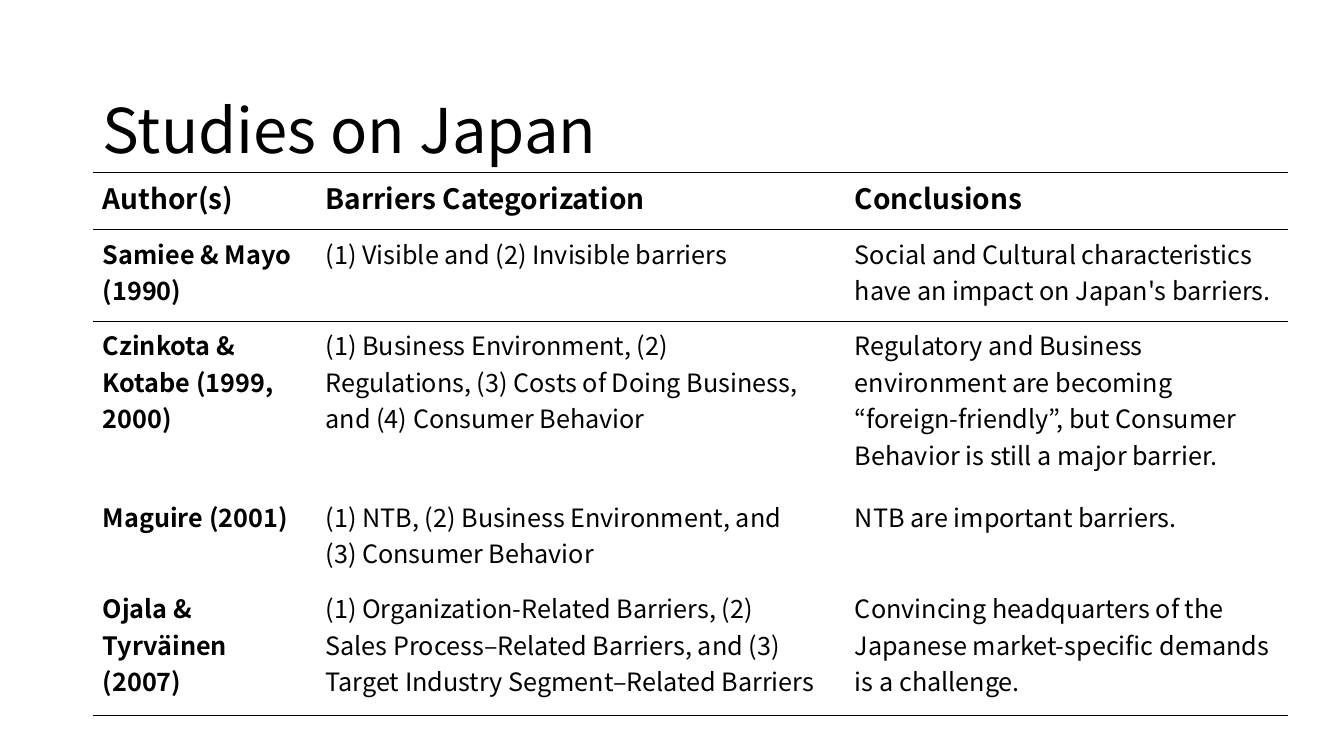
"""Build a slide with a ruled table of studies on trade barriers in Japan."""
from lxml import etree
from pptx import Presentation
from pptx import util as u
from pptx.dml.color import RGBColor
from pptx.enum import text
from pptx.oxml.ns import qn

TITLE = "Studies on Japan"
STUDIES = [
    ("Author(s)", "Barriers Categorization", "Conclusions"),
    ("Samiee & Mayo (1990)",
     "(1) Visible and (2) Invisible barriers",
     "Social and Cultural characteristics\nhave an impact on Japan's barriers."),
    ("Czinkota & Kotabe (1999, 2000)",
     "(1) Business Environment, (2)\nRegulations, (3) Costs of Doing Business,\n"
     "and (4) Consumer Behavior",
     "Regulatory and Business\nenvironment are becoming\n"
     "“foreign-friendly”, but Consumer\nBehavior is still a major barrier."),
    ("Maguire (2001)",
     "(1) NTB, (2) Business Environment, and\n(3) Consumer Behavior",
     "NTB are important barriers."),
    ("Ojala & Tyrväinen (2007)",
     "(1) Organization-Related Barriers, (2)\nSales Process–Related Barriers, and (3)\n"
     "Target Industry Segment–Related Barriers",
     "Convincing headquarters of the\nJapanese market-specific demands\nis a challenge."),
]
COLUMN_WIDTHS = (2.21, 5.25, 4.39)
ROW_HEIGHTS = (0.57, 0.91, 1.7, 0.91, 1.3)
RULED_EDGES = {0, 1, 2, 5}
LEFT, TABLE_TOP = 0.92, 1.71
FONT = "Noto Sans CJK JP"
COLORS = {"ink": "000000"}


def style_font(font, size, bold=False):
    font.name, font.size, font.bold = FONT, u.Pt(size), bold
    font.color.rgb = RGBColor.from_string(COLORS["ink"])


def set_border(cell, side, ruled):
    line = etree.SubElement(cell._tc.get_or_add_tcPr(), qn(f"a:ln{side}"), w=str(u.Pt(1)))
    if ruled:
        fill = etree.SubElement(line, qn("a:solidFill"))
        etree.SubElement(fill, qn("a:srgbClr"), val=COLORS["ink"])
    else:
        etree.SubElement(line, qn("a:noFill"))


def add_title(page):
    title = page.shapes.title
    title.left, title.top = u.Inches(LEFT), u.Inches(0.6)
    title.width, title.height = u.Inches(11.5), u.Inches(1.45)
    frame = title.text_frame
    frame.text = TITLE
    frame.word_wrap = True
    frame.auto_size = text.MSO_AUTO_SIZE.NONE
    frame.vertical_anchor = text.MSO_ANCHOR.MIDDLE
    para = frame.paragraphs[0]
    para.alignment = text.PP_ALIGN.LEFT
    para.line_spacing = 0.9
    style_font(para.font, 44)


def add_studies(page):
    table = page.shapes.add_table(
        len(STUDIES), len(COLUMN_WIDTHS), u.Inches(LEFT), u.Inches(TABLE_TOP),
        u.Inches(sum(COLUMN_WIDTHS)), u.Inches(sum(ROW_HEIGHTS))).table
    table.first_row = table.horz_banding = False
    for column, width in zip(table.columns, COLUMN_WIDTHS):
        column.width = u.Inches(width)
    for row, height in zip(table.rows, ROW_HEIGHTS):
        row.height = u.Inches(height)
    for r, study in enumerate(STUDIES):
        for c, words in enumerate(study):
            cell = table.cell(r, c)
            cell.text_frame.text = words
            for para in cell.text_frame.paragraphs:
                style_font(para.font, 18 if r else 20, r == 0 or c == 0)
            edges = {"L": False, "R": False,
                     "T": r in RULED_EDGES, "B": r + 1 in RULED_EDGES}
            for side, ruled in edges.items():
                set_border(cell, side, ruled)
            cell.fill.background()


def main():
    deck = Presentation()
    deck.slide_width, deck.slide_height = u.Inches(13.33), u.Inches(7.5)
    page = deck.slides.add_slide(deck.slide_layouts[5])
    add_title(page)
    add_studies(page)
    deck.save("out.pptx")


if __name__ == "__main__":
    main()
